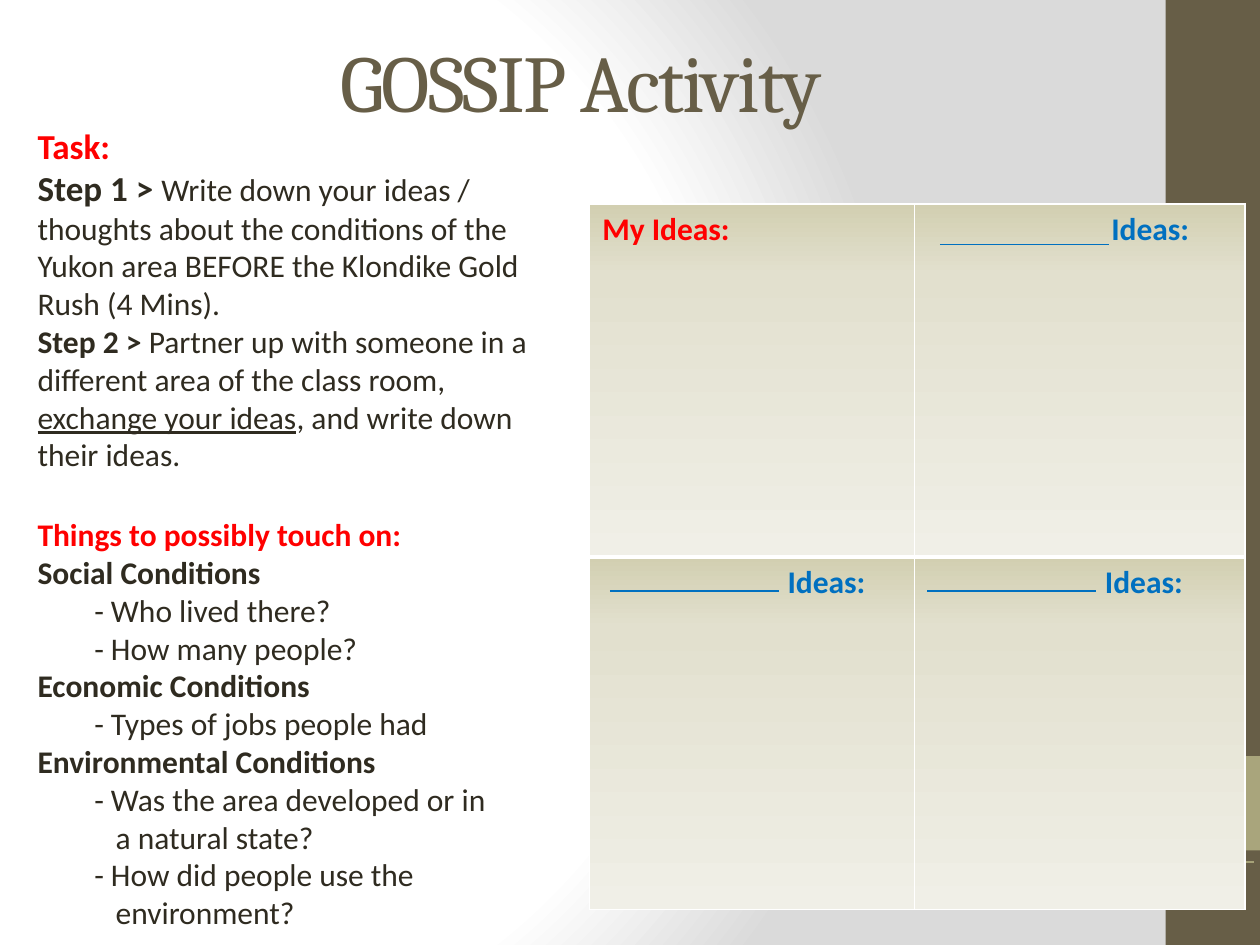
import lxml.etree
import pptx
import pptx.dml.color
import pptx.enum.shapes
import pptx.enum.text
import pptx.oxml
import pptx.oxml.ns
import pptx.util

Inches = pptx.util.Inches
Pt = pptx.util.Pt
qn = pptx.oxml.ns.qn

RED, BLUE, DARK, BROWN = "FF0000", "0070C0", "2F2B20", "675E47"
CELL_STOPS = [(0, "D2CFB1"), (20, "E2E0CE"), (100, "F0EFE7")]
PAGE_STOPS = [(0, "FFFFFF"), (75, "FFFFFF"), (100, "DADADA")]
DOWN = '<a:lin ang="5400000" scaled="0"/>'
CIRCLE = ('<a:path path="circle">'
          '<a:fillToRect l="20000" t="50000" r="100000" b="50000"/></a:path>')


def rgb(value):
    """Return the colour for a hex string."""
    return pptx.dml.color.RGBColor.from_string(value)


def gradient(stops, direction):
    """Return a gradient fill element."""
    marks = "".join(f'<a:gs pos="{pos * 1000}"><a:srgbClr val="{color}"/></a:gs>'
                    for pos, color in stops)
    return pptx.oxml.parse_xml(
        f'<a:gradFill {pptx.oxml.ns.nsdecls("a")} rotWithShape="1">'
        f'<a:gsLst>{marks}</a:gsLst>{direction}</a:gradFill>')


def set_background(s):
    """Give the slide its radial background."""
    s.background.fill.solid()
    bg = s.element.find(".//" + qn("p:bgPr"))
    bg.replace(bg[0], gradient(PAGE_STOPS, CIRCLE))


def add_bar(s, left, top, width, height, color):
    """Add a plain filled rectangle."""
    sp = s.shapes.add_shape(pptx.enum.shapes.MSO_SHAPE.RECTANGLE, Inches(left),
                            Inches(top), Inches(width), Inches(height))
    sp.shadow.inherit = False
    sp.fill.solid()
    sp.fill.fore_color.rgb = rgb(color)
    sp.line.fill.background()


def add_rule(s, left, top, width, color):
    """Add a thin horizontal line."""
    line = s.shapes.add_connector(
        pptx.enum.shapes.MSO_CONNECTOR.STRAIGHT, Inches(left), Inches(top),
        Inches(left + width), Inches(top))
    line.line.color.rgb = rgb(color)
    line.line.width = Pt(1)
    lxml.etree.SubElement(line.element.spPr, qn("a:effectLst"))


def style(r, color, bold=False, size=18, font="Calibri"):
    """Format one run."""
    r.font.name, r.font.size, r.font.bold = font, Pt(size), bold
    r.font.color.rgb = rgb(color)


def indent(p, left, first=0):
    """Set the left and first-line indents of a paragraph."""
    pPr = p._p.get_or_add_pPr()
    pPr.set("marL", str(Inches(left)))
    pPr.set("indent", str(Inches(first)))


def add_text(s, left, top, width, height):
    """Add a wrapping text box and return its text frame."""
    tf = s.shapes.add_textbox(Inches(left), Inches(top), Inches(width),
                              Inches(height)).text_frame
    tf.word_wrap = True
    return tf


def add_title(s, text):
    """Add the centred slide title."""
    tf = add_text(s, 0.51, 0.01, 8.33, 1.25)
    tf.vertical_anchor = pptx.enum.text.MSO_ANCHOR.MIDDLE
    tf.text = text
    p = tf.paragraphs[0]
    p.alignment = pptx.enum.text.PP_ALIGN.CENTER
    r = p.runs[0]
    style(r, BROWN, size=46, font="Cambria")
    r.font._element.set("spc", "-100")


def add_paragraph(tf, *parts):
    """Add a paragraph of (text, color, bold, size) runs."""
    p = tf.paragraphs[0] if not tf.text else tf.add_paragraph()
    for text, *look in parts:
        r = p.add_run()
        r.text = text
        style(r, *look)
    return p


def add_topic(tf, heading, items):
    """Add a bold heading with its hanging dash items."""
    add_paragraph(tf, (heading, DARK, True))
    for item in items:
        p = tf.add_paragraph()
        p.text = "- " + item
        indent(p, 0.62, -0.17)
        for r in p.runs:
            style(r, DARK)


def add_task(s):
    """Add the task steps and the topics."""
    tf = add_text(s, 0.2, 0.94, 4.33, 6.56)
    add_paragraph(tf, ("Task:", RED, True, 20))
    add_paragraph(tf, ("Step 1 > ", DARK, True, 20),
                  ("Write down your ideas / thoughts about the conditions of the "
                   "Yukon area BEFORE the Klondike Gold Rush (4 Mins).", DARK))
    p = add_paragraph(tf, ("Step 2 > ", DARK, True),
                      ("Partner up with someone in a different area of the "
                       "class room, ", DARK),
                      ("exchange your ideas", DARK),
                      (", and write down their ideas.", DARK))
    p.runs[2].font.underline = True
    p = add_paragraph(tf, ("Things to possibly touch on:", RED, True))
    p.space_before = Pt(24)
    add_topic(tf, "Social Conditions", ["Who lived there?", "How many people?"])
    add_topic(tf, "Economic Conditions", ["Types of jobs people had"])
    add_topic(tf, "Environmental Conditions",
              ["Was the area developed or in\va natural state?",
               "How did people use the environment?"])


def set_borders(cell, bottom):
    """Draw white cell borders with the given bottom width."""
    tcPr = cell._tc.get_or_add_tcPr()
    widths = {"lnL": 1, "lnR": 1, "lnT": 1, "lnB": bottom}
    for i, (tag, width) in enumerate(widths.items()):
        ln = pptx.oxml.parse_xml(
            f'<a:{tag} {pptx.oxml.ns.nsdecls("a")} w="{Pt(width)}"><a:solidFill>'
            f'<a:srgbClr val="FFFFFF"/></a:solidFill></a:{tag}>')
        tcPr.insert(i, ln)


def add_ideas_table(s):
    """Add the two by two table of ideas."""
    table = s.shapes.add_table(2, 2, Inches(4.68), Inches(1.62), Inches(5.2),
                               Inches(5.6)).table
    table.first_row = table.horz_banding = False
    for col, width in zip(table.columns, (2.58, 2.62)):
        col.width = Inches(width)
    labels = [[("My Ideas:", RED, 0), ("Ideas:", BLUE, 1.46)],
              [("Ideas:", BLUE, 1.47), ("Ideas:", BLUE, 1.41)]]
    for i, row in enumerate(labels):
        table.rows[i].height = Inches(2.8)
        for j, (text, color, left) in enumerate(row):
            cell = table.cell(i, j)
            cell.text = text
            p = cell.text_frame.paragraphs[0]
            indent(p, left)
            style(p.runs[0], color, True)
            cell._tc.get_or_add_tcPr().append(gradient(CELL_STOPS, DOWN))
            set_borders(cell, 3 if i == 0 else 1)


def main():
    """Build and save the slide."""
    prs = pptx.Presentation()
    prs.slide_width, prs.slide_height = Inches(10), Inches(7.5)
    s = prs.slides.add_slide(prs.slide_layouts[6])
    set_background(s)
    add_bar(s, 9.25, 0, 0.75, 7.5, BROWN)
    add_bar(s, 9.25, 6, 0.75, 0.75, "A9A57C")
    add_title(s, "GOSSIP Activity ")
    add_rule(s, 8.13, 6.84, 1.82, "A6A278")
    add_ideas_table(s)
    for left, top in ((7.36, 4.69), (4.84, 4.69), (7.46, 1.94)):
        add_rule(s, left, top, 1.34, BLUE)
    add_task(s)
    prs.save("out.pptx")


if __name__ == "__main__":
    main()
